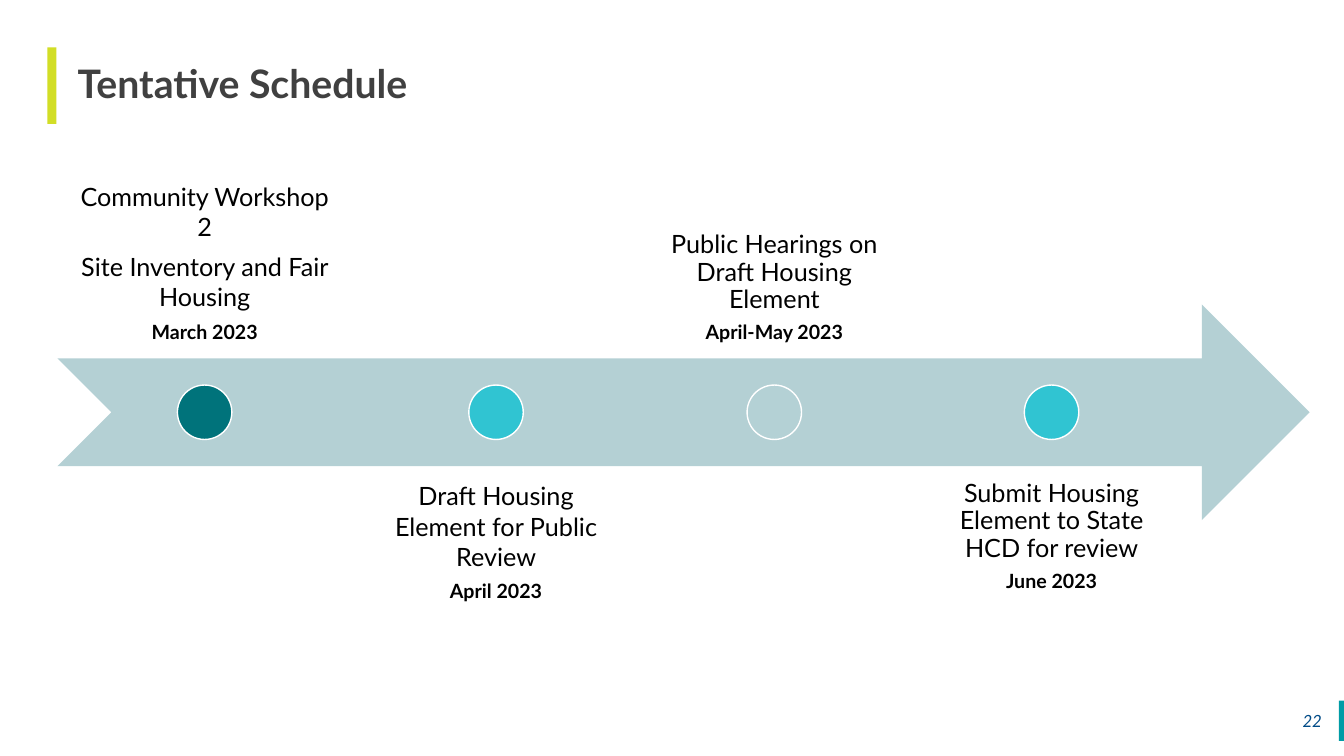
from pptx import Presentation
from pptx.dml.color import RGBColor
from pptx.enum.shapes import MSO_SHAPE
from pptx.enum.text import MSO_ANCHOR, PP_ALIGN
from pptx.util import Pt

RECTANGLE = MSO_SHAPE.RECTANGLE
OVAL = MSO_SHAPE.OVAL
ARROW = MSO_SHAPE.NOTCHED_RIGHT_ARROW
TOP, MIDDLE, BOTTOM = MSO_ANCHOR.TOP, MSO_ANCHOR.MIDDLE, MSO_ANCHOR.BOTTOM
LEFT, CENTER, RIGHT = PP_ALIGN.LEFT, PP_ALIGN.CENTER, PP_ALIGN.RIGHT

# Content
TITLE = "Tentative Schedule"
PAGE_NUMBER = "22"
# left, width, dot colour, line spacing, space after, activities, date
MILESTONES = [
    (57, 292, "00737B", 1.0, 6.3,
     ["Community Workshop 2", "Site Inventory and Fair Housing"], "March 2023"),
    (361, 262, "30C4D2", 1.0, 5,
     ["Draft Housing Element for Public Review"], "April 2023"),
    (637, 262, "B4D1D5", 0.9, 6.3,
     ["Public Hearings on Draft Housing Element"], "April-May 2023"),
    (912, 262, "30C4D2", 0.9, 6.3,
     ["Submit Housing Element to State HCD for review"], "June 2023"),
]

# Layout, in px at 100 to the inch
EMU_PER_PX = 9144
FONT = "Lato"
ARROW_LEFT, ARROW_TOP, ARROW_WIDTH, ARROW_HEIGHT = 57, 302, 1242, 214
LABEL_TOPS = (141, 463)
LABEL_INSET = 14
DOT = 54


def px(length):
    return int(length * EMU_PER_PX)


def color(value):
    return RGBColor.from_string(value)


def add_block(slide, kind, box, fill, outline=None):
    shape = slide.shapes.add_shape(kind, *map(px, box))
    shape.shadow.inherit = False
    shape.fill.solid()
    shape.fill.fore_color.rgb = color(fill)
    if outline:
        shape.line.color.rgb = color(outline)
        shape.line.width = Pt(1)
    else:
        shape.line.fill.background()


def set_frame(frame, anchor, insets):
    frame.word_wrap = True
    frame.vertical_anchor = anchor
    (frame.margin_left, frame.margin_top,
     frame.margin_right, frame.margin_bottom) = map(px, insets)


def add_run(paragraph, text, size, text_color, align, bold=False, italic=False):
    paragraph.alignment = align
    run = paragraph.add_run()
    run.text = text
    run.font.name = FONT
    run.font.size = Pt(size)
    run.font.bold = bold
    run.font.italic = italic
    run.font.color.rgb = color(text_color)


def add_label(slide, box, anchor, spacing, space_after, activities, date):
    frame = slide.shapes.add_textbox(*map(px, box)).text_frame
    set_frame(frame, anchor, [LABEL_INSET] * 4)
    lines = [(activity, 18, False) for activity in activities] + [(date, 14, True)]
    for index, (text, size, bold) in enumerate(lines):
        paragraph = frame.add_paragraph() if index else frame.paragraphs[0]
        paragraph.line_spacing = spacing
        paragraph.space_after = Pt(space_after)
        add_run(paragraph, text, size, "000000", CENTER, bold)


def main():
    presentation = Presentation()
    presentation.slide_width, presentation.slide_height = px(1333), px(750)
    slide = presentation.slides.add_slide(presentation.slide_layouts[5])

    # Accent bars
    add_block(slide, RECTANGLE, (1328, 695, 5, 40), "009CA6")
    add_block(slide, RECTANGLE, (47, 47, 9, 76), "D2DE26")

    # Title
    title = slide.shapes.title
    title.left, title.top, title.width, title.height = map(px, (57, 47, 1231, 76))
    set_frame(title.text_frame, MIDDLE, (20, 0, 0, 0))
    paragraph = title.text_frame.paragraphs[0]
    paragraph.line_spacing = 0.9
    add_run(paragraph, TITLE, 28, "404040", LEFT, bold=True)

    # Page number
    frame = slide.shapes.add_textbox(*map(px, (1280, 695, 41, 40))).text_frame
    set_frame(frame, MIDDLE, (10, 5, 10, 5))
    add_run(frame.paragraphs[0], PAGE_NUMBER, 12, "004B87", RIGHT, italic=True)

    # Timeline arrow
    add_block(slide, ARROW, (ARROW_LEFT, ARROW_TOP, ARROW_WIDTH, ARROW_HEIGHT), "B4D0D4")

    # Milestones: labels alternate above and below, dots centred on the arrow
    dot_top = ARROW_TOP + (ARROW_HEIGHT - DOT) / 2
    for index, (left, width, fill, spacing, after, activities, date) in enumerate(MILESTONES):
        below = index % 2
        add_label(slide, (left, LABEL_TOPS[below], width, ARROW_HEIGHT),
                  TOP if below else BOTTOM, spacing, after, activities, date)
        dot_left = left + (width - DOT) / 2
        add_block(slide, OVAL, (dot_left, dot_top, DOT, DOT), fill, "FFFFFF")

    presentation.save("out.pptx")


if __name__ == "__main__":
    main()
